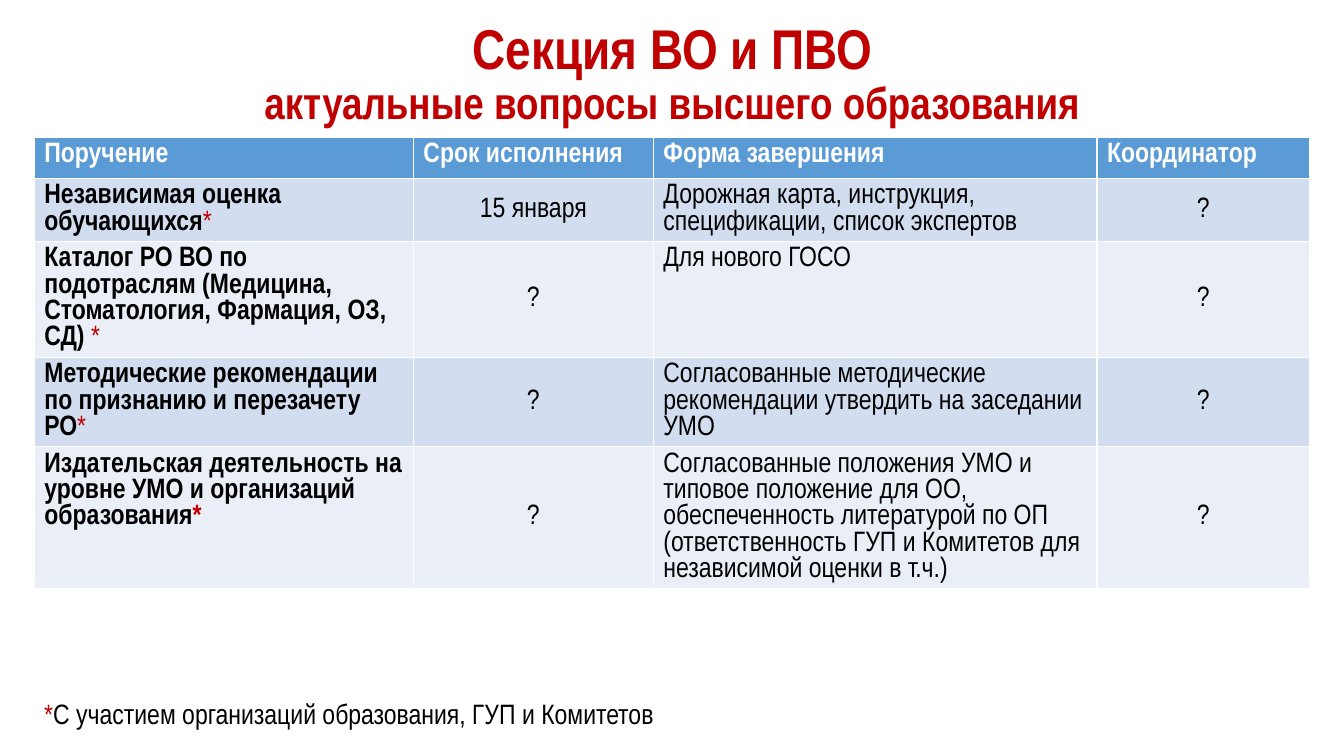
"""Build a slide with a table of current higher-education assignments."""
from pptx import Presentation
from pptx.dml.color import RGBColor
from pptx.enum.text import MSO_ANCHOR as Anchor, PP_ALIGN as Align
from pptx.util import Inches, Pt

FONT = "Arial Narrow"
COLORS = {"accent": "C00000", "text": "000000", "header_text": "FFFFFF",
          "header": "5B9BD5", "odd": "D2DEEF", "even": "EAEFF7"}
TITLE = "Секция ВО и ПВО"
SUBTITLE = "актуальные вопросы высшего образования"
HEADERS = ["Поручение", "Срок исполнения", "Форма завершения", "Координатор"]
ASSIGNMENTS = [
    ("Независимая оценка обучающихся", "*", "15 января",
     "Дорожная карта, инструкция, спецификации, список экспертов", "?"),
    ("Каталог РО ВО по подотраслям (Медицина, Стоматология, Фармация, ОЗ, СД)", " *", "?",
     "Для нового ГОСО", "?"),
    ("Методические рекомендации по признанию и перезачету РО", "*", "?",
     "Согласованные методические рекомендации утвердить на заседании УМО", "?"),
    ("Издательская деятельность на уровне УМО и организаций образования", "*", "?",
     "Согласованные положения УМО и типовое положение для ОО, обеспеченность литературой "
     "по ОП (ответственность ГУП и Комитетов для независимой оценки в т.ч.)", "?"),
]
FOOTNOTE = "С участием организаций образования, ГУП и Комитетов"
COLUMN_WIDTHS = [3.76, 2.38, 4.4, 2.11]
ROW_HEIGHTS = [0.41, 0.62, 1.15, 0.88, 1.41]
CENTERED_COLUMNS = (1, 3)
LEFT, WIDTH = 0.34, 12.65


def color(name):
    return RGBColor.from_string(COLORS[name])


def write(paragraph, *runs):
    paragraph.font.name = FONT
    paragraph.font.size = Pt(20)
    for text, color_name, bold in runs:
        run = paragraph.add_run()
        run.text = text
        run.font.bold = bold
        run.font.color.rgb = color(color_name)


def add_title(slide):
    title = slide.shapes.title
    title.left, title.top = Inches(0.92), Inches(0.2)
    title.width, title.height = Inches(11.5), Inches(1.09)
    title.text_frame.vertical_anchor = Anchor.MIDDLE
    paragraph = title.text_frame.paragraphs[0]
    paragraph.alignment = Align.CENTER
    paragraph.line_spacing = 0.9
    write(paragraph, (TITLE, "accent", True))
    paragraph.add_line_break()
    write(paragraph, (SUBTITLE, "accent", True))
    paragraph.font.size = Pt(40)
    paragraph.runs[1].font.size = Pt(32)


def add_assignments(slide):
    rows = [[[(header, "header_text", True)] for header in HEADERS]]
    for number, (task, mark, deadline, result, coordinator) in enumerate(ASSIGNMENTS, 1):
        mark_bold = number == len(ASSIGNMENTS)
        rows.append([[(task, "text", True), (mark, "accent", mark_bold)]]
                    + [[(text, "text", False)] for text in (deadline, result, coordinator)])
    table = slide.shapes.add_table(len(rows), len(HEADERS), Inches(LEFT), Inches(1.36),
                                   Inches(WIDTH), Inches(sum(ROW_HEIGHTS))).table
    for column, width in zip(table.columns, COLUMN_WIDTHS):
        column.width = Inches(width)
    for row_index, row in enumerate(rows):
        table.rows[row_index].height = Inches(ROW_HEIGHTS[row_index])
        fill = "header" if row_index == 0 else "odd" if row_index % 2 else "even"
        for column_index, runs in enumerate(row):
            cell = table.cell(row_index, column_index)
            cell.fill.solid()
            cell.fill.fore_color.rgb = color(fill)
            paragraph = cell.text_frame.paragraphs[0]
            write(paragraph, *runs)
            if row_index and column_index in CENTERED_COLUMNS:
                cell.vertical_anchor = Anchor.MIDDLE
                paragraph.alignment = Align.CENTER


def add_footnote(slide):
    footnote = slide.shapes.add_textbox(Inches(LEFT), Inches(6.86), Inches(WIDTH), Inches(0.44))
    footnote.text_frame.word_wrap = True
    write(footnote.text_frame.paragraphs[0],
          ("*", "accent", False), (FOOTNOTE, "text", False))


def main():
    presentation = Presentation()
    presentation.slide_width, presentation.slide_height = Inches(13.33), Inches(7.5)
    slide = presentation.slides.add_slide(presentation.slide_layouts[5])
    add_title(slide)
    add_assignments(slide)
    add_footnote(slide)
    presentation.save("out.pptx")


if __name__ == "__main__":
    main()
